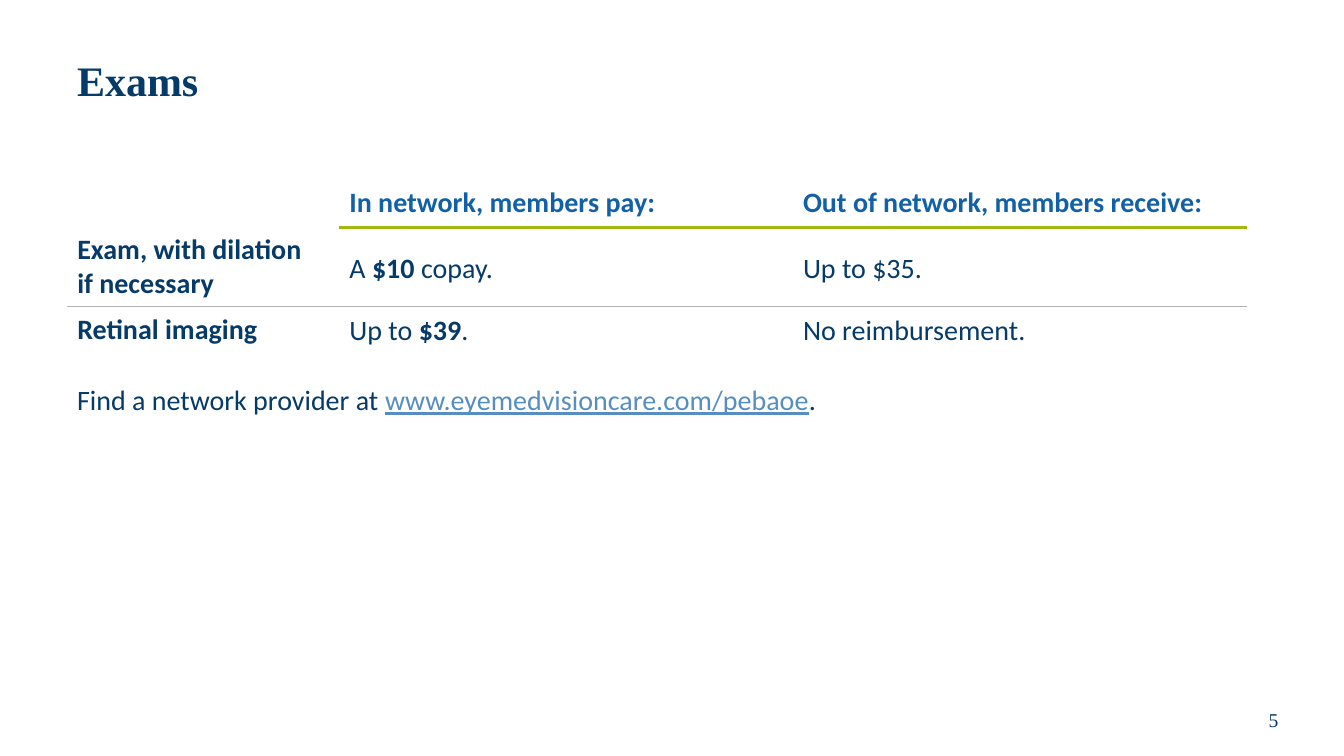
from lxml import etree
from pptx import Presentation
from pptx import util as u
from pptx.dml.color import RGBColor
from pptx.enum import text
from pptx.oxml import ns

# Content: a paragraph is a list of (words, format) spans
COLORS = {"navy": "063A68", "blue": "1260A7", "link": "568EC1",
          "green": "A0B810", "gray": "B2B2B2"}
BODY = {"name": "Calibri", "size": u.Pt(20), "color": "navy", "bold": False}
STRONG = {**BODY, "bold": True}
HEAD = {**STRONG, "color": "blue"}
LINK = {**BODY, "color": "link", "underline": True}
TITLE = {**STRONG, "name": "Times New Roman", "size": u.Pt(30)}
NUMBER = {**BODY, "name": "Times New Roman", "size": u.Pt(14)}

BENEFITS = [
    [[], [("In network, members pay:", HEAD)],
     [("Out of network, members receive:", HEAD)]],
    [[("Exam, with dilation \nif necessary", STRONG)],
     [("A ", BODY), ("$10 ", STRONG), ("copay.", BODY)], [("Up to $35.", BODY)]],
    [[("Retinal imaging", STRONG)],
     [("Up to ", BODY), ("$39", STRONG), (".", BODY)], [("No reimbursement.", BODY)]],
]
COLUMN_WIDTHS = [194.4, 324, 324]
ROW_HEIGHTS = [36, 56.4, 31]
RULES = {1: ("green", 2.25), 2: ("gray", 0.5)}  # line above each row
LEFT = 48
MIDDLE, TOP = text.MSO_ANCHOR.MIDDLE, text.MSO_ANCHOR.TOP

# Left, top, width, height, anchor, paragraph format, spans
BOXES = [
    (LEFT, 18, 864, 82.8, MIDDLE, {"line_spacing": 0.9}, [("Exams", TITLE)]),
    (LEFT, 270, 648, 31.5, TOP, {},
     [("Find a network provider at ", BODY),
      ("www.eyemedvisioncare.com/pebaoe", LINK), (".", BODY)]),
    (867.6, 496, 84.2, 36, MIDDLE, {"alignment": text.PP_ALIGN.CENTER},
     [("5", NUMBER)]),
]


def write(para, spans, layout):
    for name, value in layout.items():
        setattr(para, name, value)
    for words, look in spans:
        for index, line in enumerate(words.split("\n")):
            if index:
                para.add_line_break()
            span = para.add_run()
            span.text = line
            for name, value in look.items():
                if name == "color":
                    span.font.color.rgb = RGBColor.from_string(COLORS[value])
                else:
                    setattr(span.font, name, value)


def set_borders(cell, above, below):
    properties = cell._tc.get_or_add_tcPr()
    sides = {"a:lnL": None, "a:lnR": None, "a:lnT": above, "a:lnB": below}
    for index, (tag, rule) in enumerate(sides.items()):
        line = etree.Element(ns.qn(tag))
        properties.insert(index, line)
        if rule:
            color, width = rule
            line.set("w", str(u.Pt(width)))
            fill = etree.SubElement(line, ns.qn("a:solidFill"))
            etree.SubElement(fill, ns.qn("a:srgbClr"), val=COLORS[color])
        else:
            etree.SubElement(line, ns.qn("a:noFill"))


deck = Presentation()
deck.slide_width, deck.slide_height = u.Pt(960), u.Pt(540)
page = deck.slides.add_slide(deck.slide_layouts[6])

# Title, provider line and page number
for left, top, width, height, anchor, layout, spans in BOXES:
    box = page.shapes.add_textbox(u.Pt(left), u.Pt(top), u.Pt(width), u.Pt(height))
    box.text_frame.word_wrap = True
    box.text_frame.vertical_anchor = anchor
    write(box.text_frame.paragraphs[0], spans, layout)

# Benefits table
table = page.shapes.add_table(
    len(ROW_HEIGHTS), len(COLUMN_WIDTHS), u.Pt(LEFT), u.Pt(126.7),
    u.Pt(sum(COLUMN_WIDTHS)), u.Pt(sum(ROW_HEIGHTS))).table
table.first_row = table.horz_banding = False
for column, width in zip(table.columns, COLUMN_WIDTHS):
    column.width = u.Pt(width)
for row, height in zip(table.rows, ROW_HEIGHTS):
    row.height = u.Pt(height)

for r, row in enumerate(BENEFITS):
    for c, spans in enumerate(row):
        cell = table.cell(r, c)
        cell.vertical_anchor = MIDDLE
        cell.fill.background()
        # The green rule skips the row labels
        above, below = (None if c == 0 and edge == 1 else RULES.get(edge)
                        for edge in (r, r + 1))
        set_borders(cell, above, below)
        write(cell.text_frame.paragraphs[0], spans,
              {"line_spacing": 1.07} if r and c else {})

deck.save("out.pptx")
